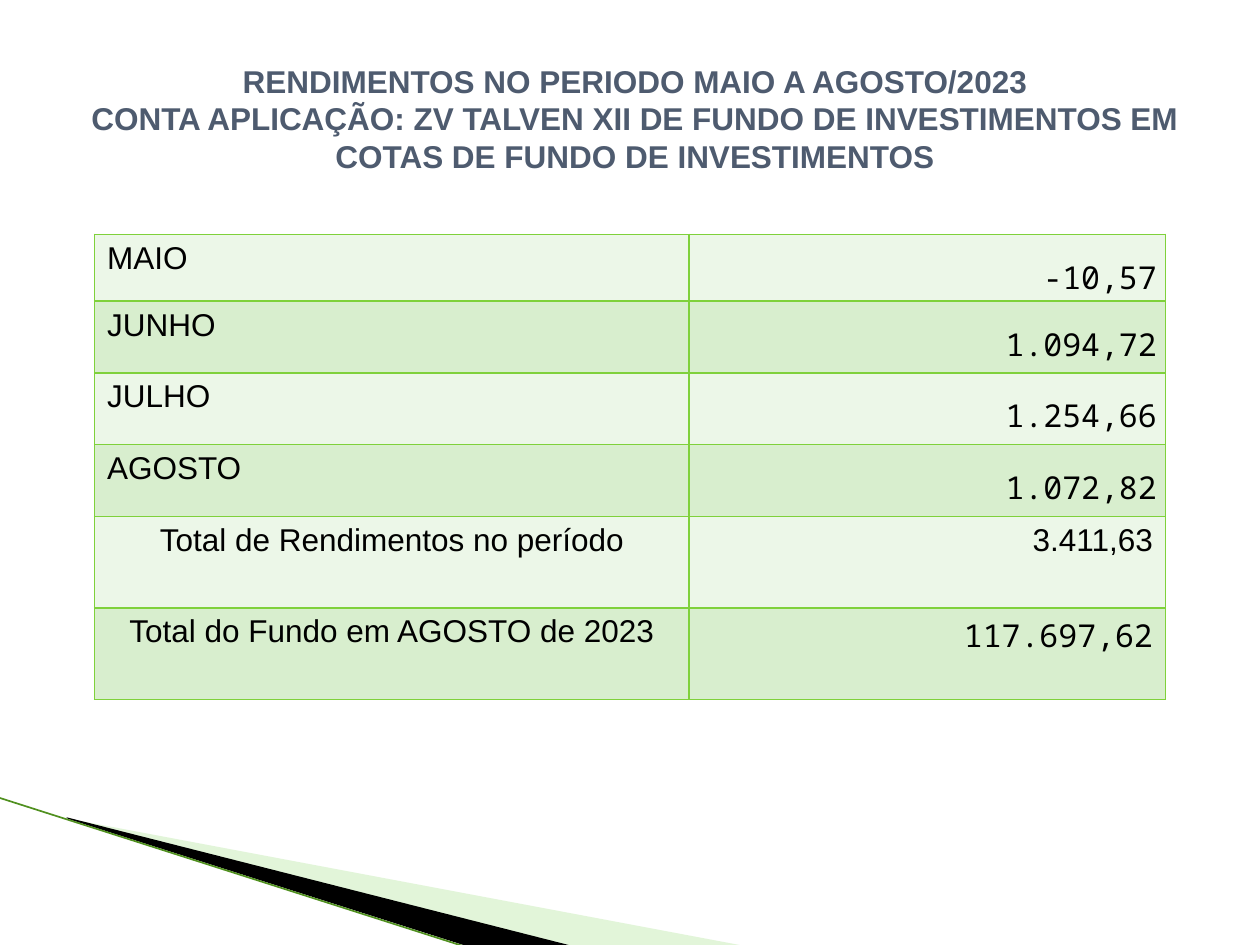
import pptx
import pptx.dml.color
import pptx.enum.shapes
import pptx.enum.text
import pptx.oxml
import pptx.oxml.ns
import pptx.util
from lxml import etree

Pt = pptx.util.Pt
RGBColor = pptx.dml.color.RGBColor
ALIGN = pptx.enum.text.PP_ALIGN
qn = pptx.oxml.ns.qn

BLACK = RGBColor(0x00, 0x00, 0x00)
SLATE = RGBColor(0x4E, 0x5B, 0x6F)
GREEN = RGBColor(0x7F, 0xD1, 0x3B)
DARK_GREEN = RGBColor(0x50, 0x90, 0x1F)
WEDGE_GREEN = RGBColor(0xB8, 0xE7, 0xA1)
BANDS = [RGBColor(0xEC, 0xF7, 0xE8), RGBColor(0xD8, 0xEE, 0xCE)]

SANS = "Arial"
MONO = "Noto Sans Mono"
TEXT_SIZE = 18

TITLE = [
    "RENDIMENTOS NO PERIODO MAIO A AGOSTO/2023",
    "CONTA APLICAÇÃO: ZV TALVEN XII DE FUNDO DE INVESTIMENTOS EM COTAS DE FUNDO DE INVESTIMENTOS",
]
MONTHS = [
    ("MAIO", "-10,57"),
    ("JUNHO", "1.094,72"),
    ("JULHO", "1.254,66"),
    ("AGOSTO", "1.072,82"),
]
TOTALS = [
    ("Total de Rendimentos no período", "3.411,63", SANS),
    ("Total do Fundo em AGOSTO de 2023", "117.697,62", MONO),
]
COLUMN_WIDTHS = [339.84, 272.16]
ROW_HEIGHTS = [38.2, 41, 41, 41, 52.4, 52.4]

WEDGES = [
    ([(39.6, 468.5), (428.4, 540.7), (328.3, 540.7), (39.6, 468)], WEDGE_GREEN, 40),
    ([(38.2, 467.3), (329, 540.7), (267.8, 541.4), (38.9, 468)], BLACK, 100),
]
EDGE = (-0.7, 455.8, 267.1, 541.4)


def add_wedge(slide, points, color, opacity):
    builder = slide.shapes.build_freeform(*points[0], scale=Pt(1))
    builder.add_line_segments(points[1:], close=True)
    shape = builder.convert_to_shape()
    shape.shadow.inherit = False
    shape.fill.solid()
    shape.fill.fore_color.rgb = color
    shape.line.fill.background()
    if opacity < 100:
        color_element = shape.fill._xPr.find(".//" + qn("a:srgbClr"))
        etree.SubElement(color_element, qn("a:alpha"), val=str(opacity * 1000))


def add_edge(slide):
    edge = slide.shapes.add_connector(
        pptx.enum.shapes.MSO_CONNECTOR.STRAIGHT, *[Pt(value) for value in EDGE]
    )
    edge.line.color.rgb = DARK_GREEN
    edge.line.width = Pt(0.95)
    etree.SubElement(edge._element.spPr, qn("a:effectLst"))


def format_paragraph(paragraph, alignment, font_name, color, bold=False):
    paragraph.alignment = alignment
    for run in paragraph.runs:
        run.font.name = font_name
        run.font.size = Pt(TEXT_SIZE)
        run.font.bold = bold
        run.font.color.rgb = color


def add_title(slide):
    box = slide.shapes.add_textbox(Pt(42.5), Pt(31.7), Pt(640.8), Pt(72.7))
    text_frame = box.text_frame
    text_frame.word_wrap = True
    text_frame.text = "\n".join(TITLE)
    for paragraph in text_frame.paragraphs:
        format_paragraph(paragraph, ALIGN.CENTER, SANS, SLATE, True)


def add_borders(cell):
    properties = cell._tc.get_or_add_tcPr()
    for index, side in enumerate(("lnL", "lnR", "lnT", "lnB")):
        border = pptx.oxml.parse_xml(
            f'<a:{side} {pptx.oxml.ns.nsdecls("a")} w="12700"><a:solidFill>'
            f'<a:srgbClr val="{GREEN}"/></a:solidFill></a:{side}>'
        )
        properties.insert(index, border)


def fill_cell(cell, text, alignment, font_name, band):
    cell.text = text
    format_paragraph(cell.text_frame.paragraphs[0], alignment, font_name, BLACK)
    cell.fill.solid()
    cell.fill.fore_color.rgb = band
    add_borders(cell)


def add_income_table(slide):
    table = slide.shapes.add_table(
        len(ROW_HEIGHTS), len(COLUMN_WIDTHS), Pt(54), Pt(133.9),
        Pt(sum(COLUMN_WIDTHS)), Pt(sum(ROW_HEIGHTS)),
    ).table
    for column, width in zip(table.columns, COLUMN_WIDTHS):
        column.width = Pt(width)
    for row, height in zip(table.rows, ROW_HEIGHTS):
        row.height = Pt(height)

    rows = [(label, value, MONO) for label, value in MONTHS] + TOTALS
    for index, (label, value, value_font) in enumerate(rows):
        is_month = index < len(MONTHS)
        band = BANDS[index % 2]
        label_alignment = ALIGN.LEFT if is_month else ALIGN.CENTER
        fill_cell(table.cell(index, 0), label, label_alignment, SANS, band)
        value_cell = table.cell(index, 1)
        fill_cell(value_cell, value, ALIGN.RIGHT, value_font, band)
        if is_month:
            value_cell.margin_left = value_cell.margin_right = Pt(5)
            value_cell.margin_top = value_cell.margin_bottom = 0
            value_cell.text_frame.paragraphs[0].line_spacing = 1.5


def main():
    presentation = pptx.Presentation()
    presentation.slide_width = Pt(720)
    presentation.slide_height = Pt(540)
    slide = presentation.slides.add_slide(presentation.slide_layouts[6])
    for points, color, opacity in WEDGES:
        add_wedge(slide, points, color, opacity)
    add_edge(slide)
    add_title(slide)
    add_income_table(slide)
    presentation.save("out.pptx")


if __name__ == "__main__":
    main()
